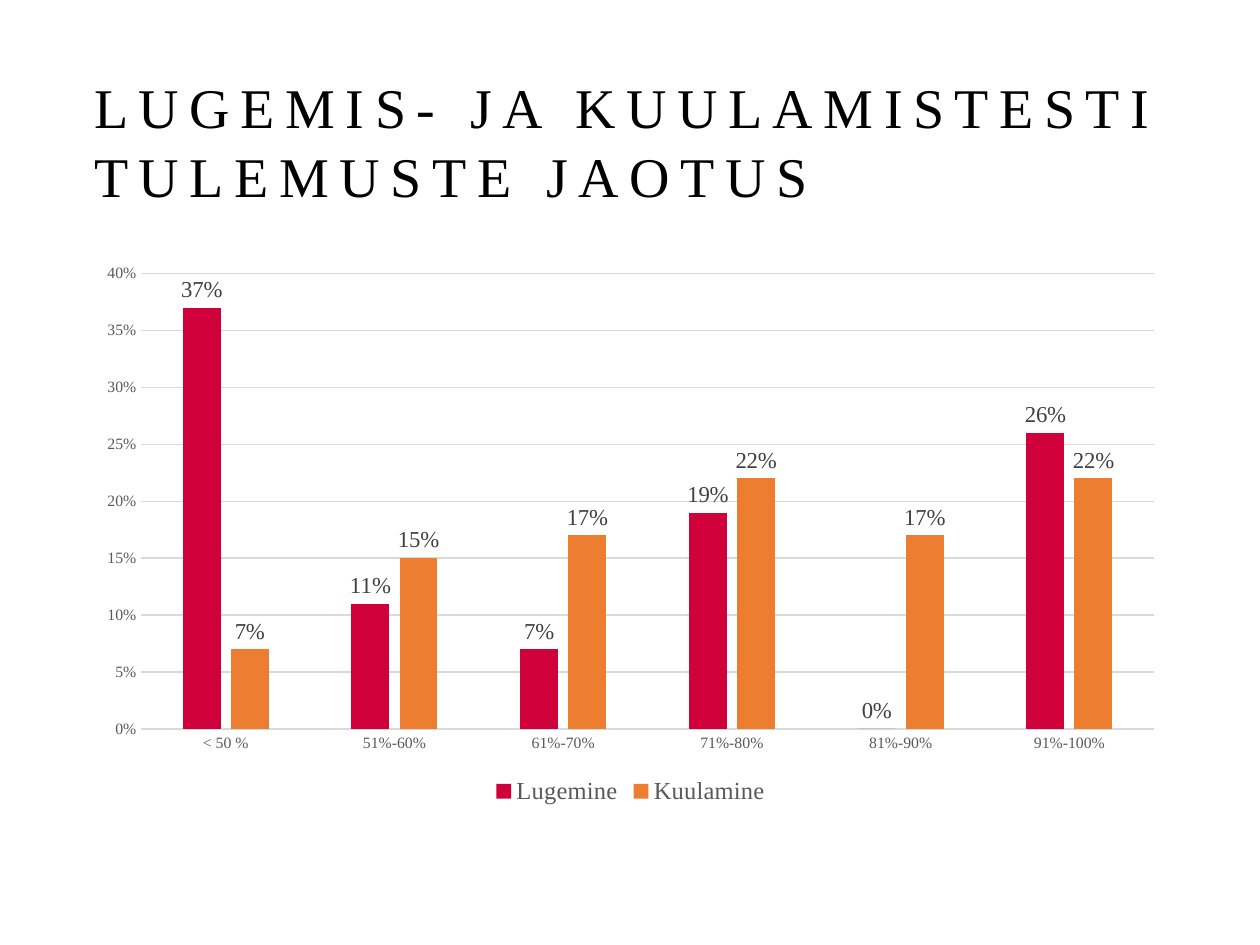
from pptx import Presentation
from pptx.chart.data import CategoryChartData
from pptx.dml.color import RGBColor
from pptx.enum.chart import (XL_CHART_TYPE, XL_LABEL_POSITION,
                             XL_LEGEND_POSITION, XL_TICK_MARK)
from pptx.enum.text import MSO_ANCHOR
from pptx.util import Inches, Pt

BLACK = RGBColor(0x00, 0x00, 0x00)
DARK = RGBColor(0x40, 0x40, 0x40)
GRAY = RGBColor(0x59, 0x59, 0x59)
LIGHT = RGBColor(0xD9, 0xD9, 0xD9)
RED = RGBColor(0xCF, 0x00, 0x3A)
ORANGE = RGBColor(0xED, 0x7D, 0x31)


def style(font, size, color):
    font.name = "Times New Roman"
    font.size = Pt(size)
    font.color.rgb = color


def rule(line):
    line.color.rgb = LIGHT
    line.width = Pt(0.75)


deck = Presentation()
deck.slide_width, deck.slide_height = Inches(10), Inches(7.5)
slide = deck.slides.add_slide(deck.slide_layouts[6])

# Title with wide letter spacing
box = slide.shapes.add_textbox(Inches(0.65), Inches(0.34), Inches(8.71), Inches(1.35))
frame = box.text_frame
frame.word_wrap = True
frame.vertical_anchor = MSO_ANCHOR.BOTTOM
frame.margin_bottom = Inches(0.03)
title = frame.paragraphs[0]
title.line_spacing = 1.04
run = title.add_run()
run.text = "LUGEMIS- JA KUULAMISTESTI TULEMUSTE JAOTUS"
style(title.font, 32, BLACK)
run.font._element.set("spc", "600")

# Chart data
data = CategoryChartData(number_format="0%")
data.categories = ["< 50 %", "51%-60%", "61%-70%", "71%-80%", "81%-90%", "91%-100%"]
data.add_series("Lugemine", [0.37, 0.11, 0.07, 0.19, 0, 0.26])
data.add_series("Kuulamine", [0.07, 0.15, 0.17, 0.22, 0.17, 0.22])
chart = slide.shapes.add_chart(
    XL_CHART_TYPE.COLUMN_CLUSTERED,
    Inches(0.68), Inches(2.01), Inches(8.65), Inches(4.42), data).chart
chart.has_title = False
style(chart.font, 10, BLACK)

# Columns and their labels
plot = chart.plots[0]
plot.gap_width = 219
plot.overlap = -27
plot.vary_by_categories = False
for bars, color in zip(plot.series, (RED, ORANGE)):
    bars.format.fill.solid()
    bars.format.fill.fore_color.rgb = color
    bars.invert_if_negative = False
    labels = bars.data_labels
    labels.show_value = True
    labels.position = XL_LABEL_POSITION.OUTSIDE_END
    labels.number_format = "0%"
    labels.number_format_is_linked = False
    style(labels.font, 13, DARK)

# Axes
cats, vals = chart.category_axis, chart.value_axis
for axis in (cats, vals):
    axis.major_tick_mark = axis.minor_tick_mark = XL_TICK_MARK.NONE
    style(axis.tick_labels.font, 9, GRAY)
rule(cats.format.line)
vals.format.line.fill.background()
rule(vals.major_gridlines.format.line)
vals.minimum_scale, vals.maximum_scale, vals.major_unit = 0, 0.4, 0.05
vals.tick_labels.number_format = "0%"
vals.tick_labels.number_format_is_linked = False

# Legend
chart.has_legend = True
chart.legend.position = XL_LEGEND_POSITION.BOTTOM
chart.legend.include_in_layout = False
style(chart.legend.font, 14, GRAY)

deck.save("out.pptx")
